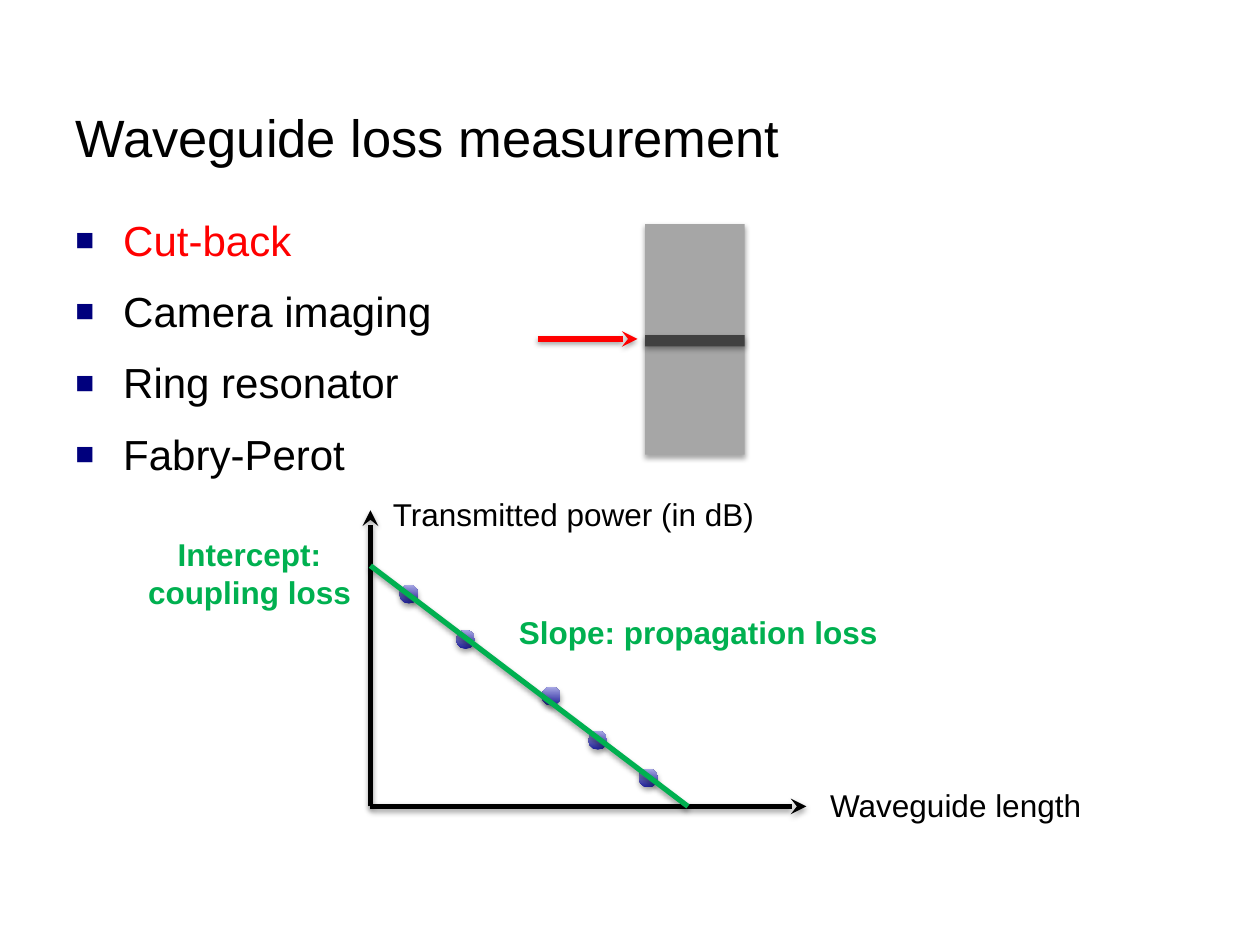
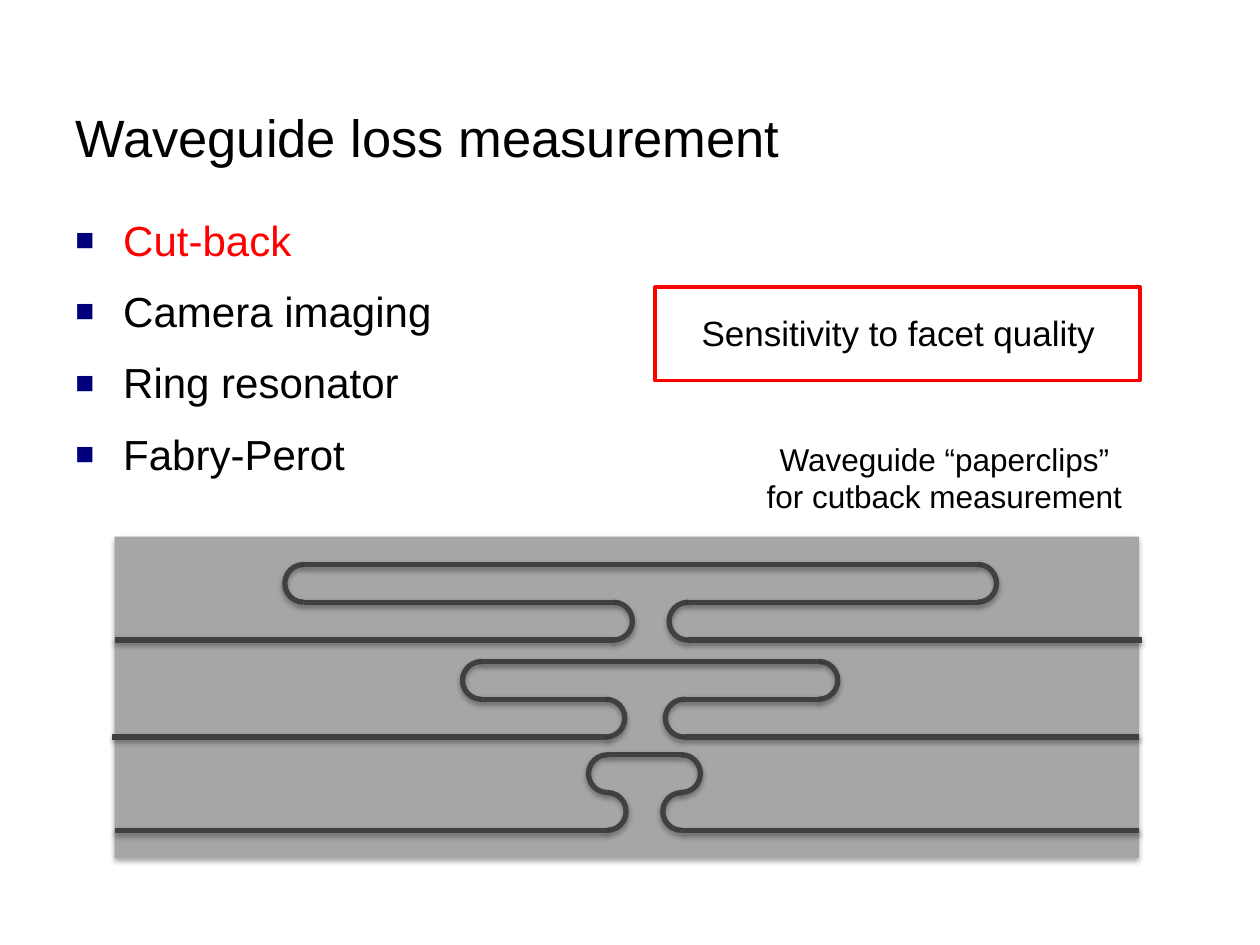
from lxml import etree
from pptx import Presentation, util as u
from pptx.dml.color import RGBColor
from pptx.enum import shapes as es, text as et
from pptx.oxml import ns

SCALE = 9144
FONT = "Arial"
COLORS = {
    "black": "000000", "red": "FF0000", "green": "00B050", "bullet": "00007D",
    "chip": "A6A6A6", "guide": "404040", "dot_dark": "1F1F98", "dot_light": "A9A9E5",
}
METHODS = ["Cut-back", "Camera imaging", "Ring resonator", "Fabry-Perot"]
BEND = 30


def px(*lengths):
    return [u.Emu(length * SCALE) for length in lengths]


def rgb(name):
    return RGBColor.from_string(COLORS[name])


def add(parent, tag, **attributes):
    return etree.SubElement(parent, ns.qn("a:" + tag), attributes)


class Deck:
    def __init__(self):
        self.prs = Presentation()
        self.prs.slide_width, self.prs.slide_height = px(1000, 750)

    def new_slide(self, title):
        self.slide = self.prs.slides.add_slide(self.prs.slide_layouts[5])
        heading = self.slide.shapes.title
        heading.left, heading.top, heading.width, heading.height = px(50, 50, 900, 117)
        frame = heading.text_frame
        frame.text = title
        frame.auto_size = et.MSO_AUTO_SIZE.NONE
        frame.vertical_anchor = et.MSO_ANCHOR.MIDDLE
        frame.paragraphs[0].alignment = et.PP_ALIGN.LEFT
        self.style(frame.paragraphs[0], 30)

    def style(self, paragraph, size, color="black", bold=False):
        font = paragraph.font
        font.name, font.size, font.bold = FONT, u.Pt(size), bold
        font.color.rgb = rgb(color)

    def shadow(self, effects, distance, alpha):
        cast = add(effects, "outerShdw", blurRad=str(u.Pt(3.1)), dist=str(u.Pt(distance)),
                   dir="5400000", rotWithShape="0")
        add(add(cast, "srgbClr", val=COLORS["black"]), "alpha", val=str(alpha * 1000))

    def bullets(self, items, current):
        frame = self.slide.shapes.add_textbox(*px(50, 165, 900, 526)).text_frame
        frame.word_wrap = True
        for i, item in enumerate(items):
            paragraph = frame.paragraphs[0] if i == 0 else frame.add_paragraph()
            paragraph.text = item
            paragraph.space_before = u.Pt(6 if i else 0)
            paragraph.space_after = u.Pt(6)
            props = paragraph._p.get_or_add_pPr()
            props.set("marL", str(38 * SCALE))
            props.set("indent", str(-38 * SCALE))
            add(add(props, "buClr"), "srgbClr", val=COLORS["bullet"])
            add(props, "buSzPct", val="75000")
            add(props, "buFont", typeface=FONT)
            add(props, "buChar", char="■")
            self.style(paragraph, 24, "red" if item == current else "black")

    def label(self, words, box, size=18, color="black", bold=False, centered=False):
        frame = self.slide.shapes.add_textbox(*px(*box)).text_frame
        frame.word_wrap = centered
        frame.auto_size = et.MSO_AUTO_SIZE.SHAPE_TO_FIT_TEXT
        paragraph = frame.paragraphs[0]
        paragraph.text = words
        if centered:
            paragraph.alignment = et.PP_ALIGN.CENTER
        self.style(paragraph, size, color, bold)

    def shape(self, kind, box, fill=None, line=None, width=3, shadow=True):
        shape = self.slide.shapes.add_shape(kind, *px(*box))
        shape.shadow.inherit = False
        if fill:
            shape.fill.solid()
            shape.fill.fore_color.rgb = rgb(fill)
        else:
            shape.fill.background()
        if line:
            shape.line.color.rgb = rgb(line)
            shape.line.width = u.Pt(width)
        else:
            shape.line.fill.background()
        if shadow:
            effects = shape._element.spPr.find(ns.qn("a:effectLst"))
            self.shadow(effects, 1.8, 35)
        return shape

    def rect(self, box, **look):
        return self.shape(es.MSO_SHAPE.RECTANGLE, box, **look)

    def dot(self, left, top):
        dot = self.shape(es.MSO_SHAPE.OVAL, (left, top, 15, 15))
        dot.fill.gradient()
        dot.fill.gradient_angle = 90
        for stop, color in zip(dot.fill.gradient_stops, ("dot_dark", "dot_light")):
            stop.color.rgb = rgb(color)

    def bend(self, left, top, rotation):
        arc = self.shape(es.MSO_SHAPE.ARC, (left, top, BEND, BEND), line="guide")
        arc.adjustments[0], arc.adjustments[1] = 162, 55.04
        arc.rotation = rotation

    def line(self, start, end, color, arrow=False):
        line = self.slide.shapes.add_connector(es.MSO_CONNECTOR.STRAIGHT, *px(*start, *end))
        line.line.color.rgb = rgb(color)
        line.line.width = u.Pt(3)
        if arrow:
            add(line.line._get_or_add_ln(), "tailEnd", type="stealth")
        self.shadow(add(line._element.spPr, "effectLst"), 1.6, 38)

    def paperclip(self, top, start, outer_left, inner_left, inner_right, outer_right, end):
        middle, bottom = top + BEND, top + 2 * BEND
        for left, y, rotation in ((inner_left, middle, 0), (outer_left, top, 180),
                                  (inner_right, middle, 180), (outer_right, top, 0)):
            self.bend(left, y, rotation)
        ol, il, ir, right = (x + BEND // 2 for x in (outer_left, inner_left, inner_right, outer_right))
        for x1, x2, y in ((start, il, bottom), (ol, il, middle), (ol, right, top),
                          (ir, right, middle), (ir, end, bottom)):
            if x1 != x2:
                self.line((x1, y), (x2, y), "guide")


def cutback_principle(deck):
    deck.rect((512, 178, 79, 183), fill="chip")
    deck.rect((512, 266, 79, 9), fill="guide")
    deck.line((427, 269), (506, 269), "red", arrow=True)

    origin = (294, 640)
    deck.line(origin, (294, 405), "black", arrow=True)
    deck.line(origin, (640, 640), "black", arrow=True)
    deck.label("Waveguide length", (649, 619, 221, 40))
    deck.label("Transmitted power (in dB)", (302, 388, 310, 40))
    for left, top in ((317, 464), (362, 500), (430, 545), (467, 580), (507, 610)):
        deck.dot(left, top)
    deck.line((294, 449), (546, 640), "green")
    deck.label("Slope: propagation loss", (402, 482, 308, 40), color="green", bold=True)
    deck.label("Intercept: coupling loss", (92, 420, 212, 71), color="green", bold=True,
               centered=True)


def paperclip_layout(deck):
    deck.rect((91, 426, 813, 255), fill="chip")
    for clip in ((599, 91, 467, 467, 526, 526, 904),
                 (525, 89, 367, 466, 528, 635, 904),
                 (448, 91, 226, 472, 531, 761, 906)):
        deck.paperclip(*clip)
    deck.label("Waveguide “paperclips” for cutback measurement", (595, 344, 309, 71),
               centered=True)
    deck.rect((520, 228, 385, 74), line="red", width=2, shadow=False)
    deck.label("Sensitivity to facet quality", (529, 242, 368, 44), size=20, centered=True)


def main():
    deck = Deck()
    for draw in (cutback_principle, paperclip_layout):
        deck.new_slide("Waveguide loss measurement")
        deck.bullets(METHODS, current="Cut-back")
        draw(deck)
    deck.prs.save("out.pptx")


if __name__ == "__main__":
    main()
